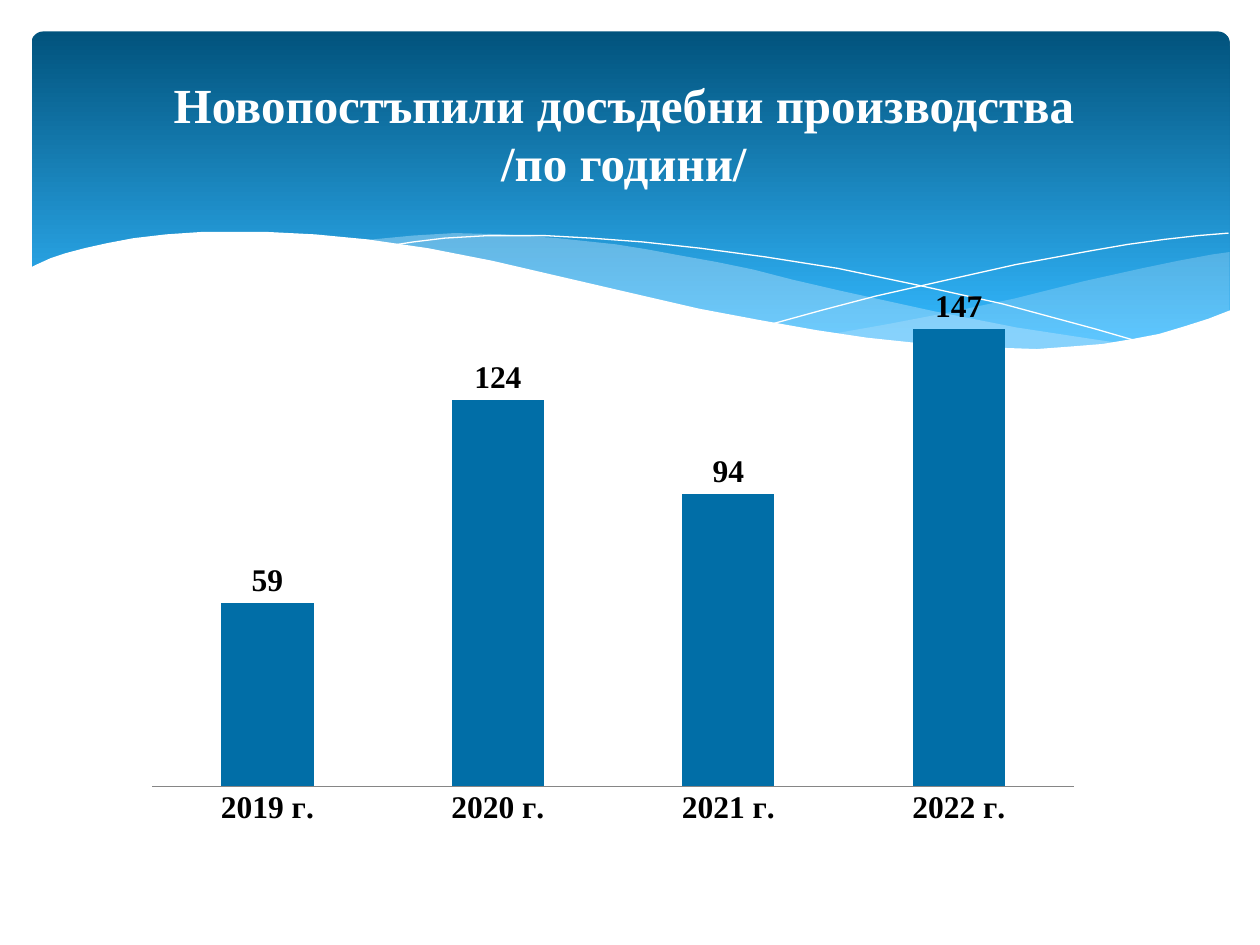
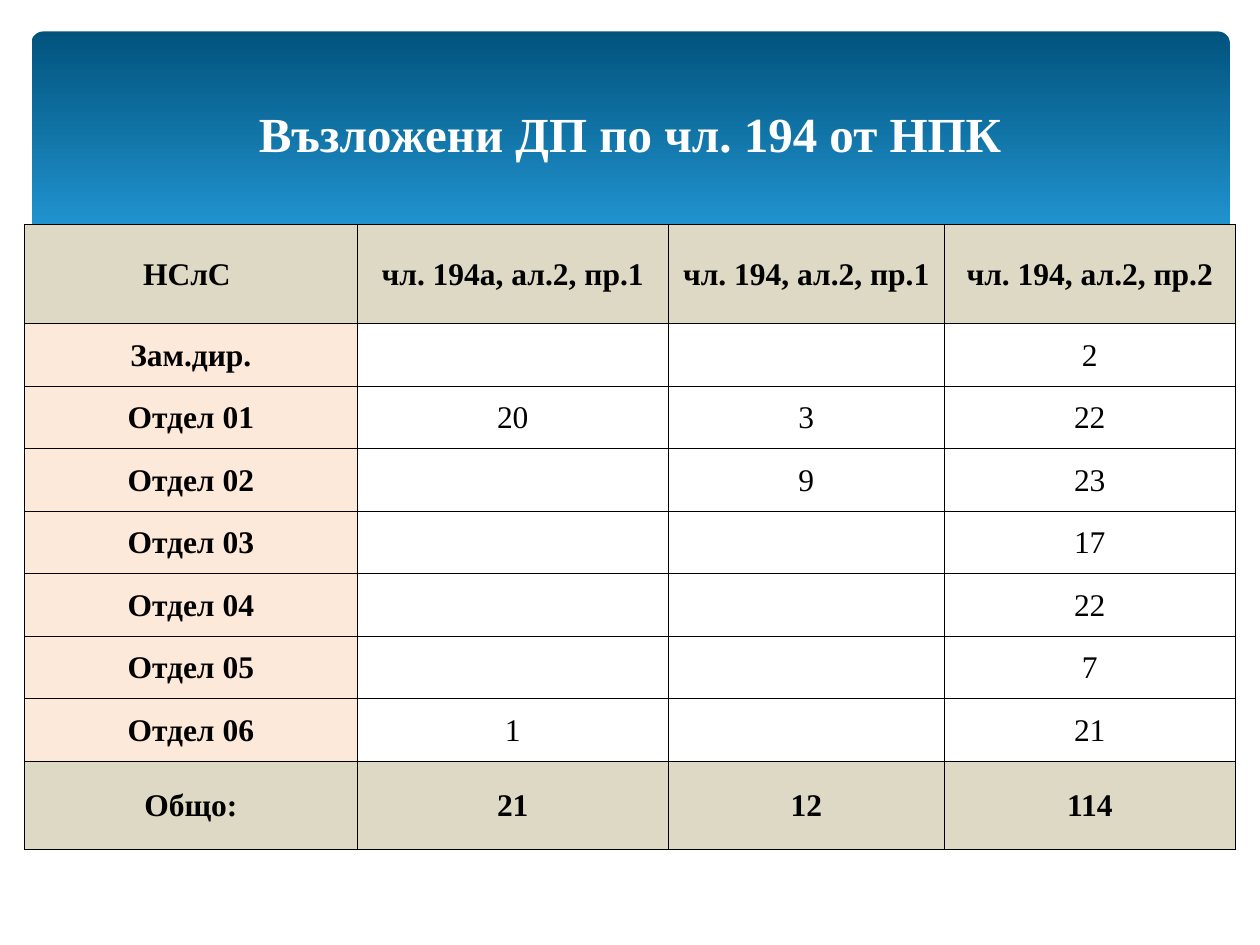
from dataclasses import dataclass

from lxml import etree
from pptx import Presentation
from pptx.chart.data import CategoryChartData
from pptx.dml.color import RGBColor
from pptx.enum.chart import XL_CHART_TYPE, XL_LABEL_POSITION, XL_TICK_MARK
from pptx.enum.shapes import MSO_SHAPE
from pptx.enum.text import MSO_ANCHOR, MSO_AUTO_SIZE, PP_ALIGN
from pptx.oxml.ns import qn
from pptx.util import Inches, Pt

COLUMNS = XL_CHART_TYPE.COLUMN_CLUSTERED
ABOVE = XL_LABEL_POSITION.OUTSIDE_END
NO_TICKS = XL_TICK_MARK.NONE
ROUNDED = MSO_SHAPE.ROUNDED_RECTANGLE
MIDDLE = MSO_ANCHOR.MIDDLE
NO_FIT = MSO_AUTO_SIZE.NONE
CENTER = PP_ALIGN.CENTER

GRID_COLS = 1000
TITLE_ONLY = 5

VEIL_RIGHT = [
    (976, 200), (962, 202), (935, 207), (906, 213), (861, 223), (805, 237),
    (753, 248), (706, 257), (661, 265), (691, 269), (719, 272), (745, 275),
    (781, 277), (814, 278), (844, 277), (872, 274), (897, 270), (921, 265),
    (942, 259), (963, 252), (976, 247),
]
VEIL_MIDDLE = [
    (893, 273), (866, 269), (807, 260), (741, 247), (668, 231), (629, 222),
    (598, 214), (569, 208), (541, 203), (514, 198), (489, 194), (442, 189),
    (399, 186), (361, 185), (328, 187), (286, 191), (323, 196), (362, 203),
    (404, 211), (449, 222), (530, 240), (584, 252), (634, 261), (680, 268),
    (722, 274), (761, 277), (796, 278), (838, 278), (867, 276), (893, 273),
]
LINE_FALLING = [
    (309, 195), (328, 192), (353, 189), (387, 187), (433, 187), (469, 189),
    (510, 192), (556, 197), (608, 204), (665, 213), (727, 226), (795, 241),
    (869, 261), (907, 272),
]
LINE_RISING = [
    (613, 257), (653, 246), (695, 235), (748, 223), (806, 210), (866, 199),
    (895, 194), (924, 190), (951, 187), (975, 185),
]
WHITE_WAVE = [
    (977, 246), (959, 253), (940, 259), (920, 265), (899, 269), (875, 273),
    (850, 275), (823, 277), (793, 276), (761, 275), (726, 272), (688, 268),
    (648, 262), (603, 254), (555, 245), (503, 233), (447, 220), (391, 207),
    (340, 197), (292, 190), (250, 186), (211, 184), (161, 184), (132, 186),
    (106, 189), (85, 193), (67, 197), (52, 201), (40, 205), (29, 210),
    (23, 213), (23, 329), (977, 329),
]

CASES = {"2019 г.": 59, "2020 г.": 124, "2021 г.": 94, "2022 г.": 147}
ASSIGNED = [
    ["НСлС ", "чл. 194а, ал.2, пр.1", "чл. 194, ал.2, пр.1", "чл. 194, ал.2, пр.2"],
    ["Зам.дир.", "", "", "2"],
    ["Отдел 01", "20", "3", "22"],
    ["Отдел 02", "", "9", "23"],
    ["Отдел 03", "", "", "17"],
    ["Отдел 04", "", "", "22"],
    ["Отдел 05", "", "", "7"],
    ["Отдел 06", "1", "", "21"],
    ["Общо:", "21", "12", "114"],
]


@dataclass(frozen=True)
class Theme:
    font: str = "Times New Roman"
    title_size: int = 28
    text_size: int = 18
    white: str = "FFFFFF"
    black: str = "000000"
    band_top: str = "01537D"
    band_bottom: str = "33B8FE"
    veil: str = "C6E7FC"
    bar: str = "016EA7"
    axis: str = "868686"
    total: str = "DDD9C4"
    unit: str = "FDE9D9"


def apply(obj, formats):
    for name, value in formats.items():
        setattr(obj, name, value)


def solid(fill, color):
    fill.solid()
    fill.fore_color.rgb = RGBColor.from_string(color)


class Deck:
    def __init__(self, theme):
        self.theme = theme
        self.prs = Presentation()
        apply(self.prs, {"slide_width": Inches(10), "slide_height": Inches(7.5)})
        self.step = self.prs.slide_width // GRID_COLS
        self.layout = self.prs.slide_layouts[TITLE_ONLY]
        self.s = None
        for style in self.prs.slide_master.element.iter(qn("p:titleStyle")):
            for props in style.iter(qn("a:defRPr")):
                props.set("sz", str(theme.title_size * 100))

    def grid(self, *cells):
        return [round(cell * self.step) for cell in cells]

    def new_slide(self):
        self.s = self.prs.slides.add_slide(self.layout)

    def font(self, font, size, color, bold=True):
        apply(font, {"name": self.theme.font, "size": Pt(size), "bold": bold})
        font.color.rgb = RGBColor.from_string(color)

    def band(self):
        sp = self.s.shapes.add_shape(ROUNDED, *self.grid(25, 25, 951, 270))
        sp.shadow.inherit = False
        sp.adjustments[0] = 0.034
        sp.line.fill.background()
        sp.fill.gradient()
        sp.fill.gradient_angle = 270
        stops = [(0, self.theme.band_top), (0.9, self.theme.band_bottom)]
        for stop, (position, color) in zip(sp.fill.gradient_stops, stops):
            stop.position = position
            stop.color.rgb = RGBColor.from_string(color)
        return sp

    def outline(self, points, close):
        builder = self.s.shapes.build_freeform(*points[0], scale=self.step)
        builder.add_line_segments(points[1:], close=close)
        sp = builder.convert_to_shape()
        sp.shadow.inherit = False
        return sp

    def wave(self, points, color, opacity=100):
        sp = self.outline(points, True)
        sp.line.fill.background()
        solid(sp.fill, color)
        if opacity < 100:
            for node in sp.element.spPr.iter(qn("a:srgbClr")):
                etree.SubElement(node, qn("a:alpha"), val=str(opacity * 1000))
        return sp

    def hairline(self, points):
        sp = self.outline(points, False)
        sp.fill.background()
        solid(sp.line.fill, self.theme.white)
        sp.line.width = 0
        return sp

    def backdrop(self):
        parts = [
            self.band(),
            self.wave(VEIL_RIGHT, self.theme.veil, 29),
            self.wave(VEIL_MIDDLE, self.theme.veil, 40),
            self.hairline(LINE_FALLING),
            self.hairline(LINE_RISING),
            self.wave(WHITE_WAVE, self.theme.white),
        ]
        tree = self.layout.shapes.element
        for i, sp in enumerate(parts):
            sp.element.find(".//" + qn("p:cNvPr")).set("id", str(100 + i))
            tree.insert(2 + i, sp.element)

    def title(self, text):
        sp = self.s.shapes.title
        left, top, width, height = self.grid(50, 37, 900, 137)
        apply(sp, {"left": left, "top": top, "width": width, "height": height})
        tf = sp.text_frame
        apply(tf, {"word_wrap": True, "auto_size": NO_FIT, "vertical_anchor": MIDDLE})
        p = tf.paragraphs[0]
        p.text = text
        p.alignment = CENTER
        for r in p.runs:
            self.font(r.font, self.theme.title_size, self.theme.white)

    def column_chart(self, values, box, plot_area):
        data = CategoryChartData()
        data.categories = list(values)
        data.add_series("Series 1", list(values.values()))
        chart = self.s.shapes.add_chart(COLUMNS, *self.grid(*box), data).chart
        apply(chart, {"has_legend": False, "has_title": False})
        self.font(chart.font, self.theme.text_size, self.theme.black)
        axis = chart.category_axis
        apply(axis, {"major_tick_mark": NO_TICKS, "has_major_gridlines": False})
        solid(axis.format.line.fill, self.theme.axis)
        apply(chart.value_axis, {
            "visible": False, "has_major_gridlines": False,
            "minimum_scale": 0, "maximum_scale": 160,
        })
        plot = chart.plots[0]
        apply(plot, {
            "gap_width": 150, "overlap": -25,
            "vary_by_categories": False, "has_data_labels": True,
        })
        apply(plot.data_labels, {"show_value": True, "position": ABOVE})
        self.font(plot.data_labels.font, self.theme.text_size, self.theme.black)
        solid(plot.series[0].format.fill, self.theme.bar)
        self.place_plot(chart, plot_area)

    def place_plot(self, chart, plot_area):
        area = next(chart.element.iter(qn("c:plotArea")))
        for old in area.findall(qn("c:layout")):
            area.remove(old)
        layout = etree.Element(qn("c:layout"))
        area.insert(0, layout)
        manual = etree.SubElement(layout, qn("c:manualLayout"))
        settings = {"layoutTarget": "inner", "xMode": "edge", "yMode": "edge"}
        settings.update(zip("xywh", plot_area))
        for name, value in settings.items():
            etree.SubElement(manual, qn("c:" + name), val=str(value))

    def table(self, rows, corner, widths, heights):
        box = self.grid(*corner, sum(widths), sum(heights))
        table = self.s.shapes.add_table(len(rows), len(widths), *box).table
        apply(table, {"first_row": False, "horz_banding": False})
        for column, width in zip(table.columns, self.grid(*widths)):
            column.width = width
        for row, height in zip(table.rows, self.grid(*heights)):
            row.height = height
        for i, texts in enumerate(rows):
            edge_row = i in (0, len(rows) - 1)
            for j, text in enumerate(texts):
                label = self.theme.unit if j == 0 else self.theme.white
                color = self.theme.total if edge_row else label
                self.cell(table.cell(i, j), text, color, edge_row or j == 0)

    def cell(self, cell, text, color, bold):
        margin = self.grid(1)[0]
        apply(cell, {
            "vertical_anchor": MIDDLE, "margin_left": margin,
            "margin_right": margin, "margin_top": margin, "margin_bottom": 0,
        })
        props = cell._tc.get_or_add_tcPr()
        for side in ("lnL", "lnR", "lnT", "lnB"):
            line = etree.SubElement(props, qn("a:" + side), w=str(Pt(0.5)))
            fill = etree.SubElement(line, qn("a:solidFill"))
            etree.SubElement(fill, qn("a:srgbClr"), val=self.theme.black)
        solid(cell.fill, color)
        if text:
            p = cell.text_frame.paragraphs[0]
            p.alignment = CENTER
            r = p.add_run()
            r.text = text
            self.font(r.font, self.theme.text_size, self.theme.black, bold)


def main():
    deck = Deck(Theme())
    deck.new_slide()
    deck.backdrop()
    deck.title("Новопостъпили досъдебни производства \n/по години/ ")
    deck.column_chart(CASES, (75, 225, 791, 461), (0.058, 0.008, 0.925, 0.858))

    deck.new_slide()
    deck.title("Възложени ДП по чл. 194 от НПК")
    heights = [79] + [49.6] * (len(ASSIGNED) - 2) + [70]
    deck.table(ASSIGNED, (19.5, 178), (264, 247, 219, 231), heights)
    deck.prs.save("out.pptx")


if __name__ == "__main__":
    main()
